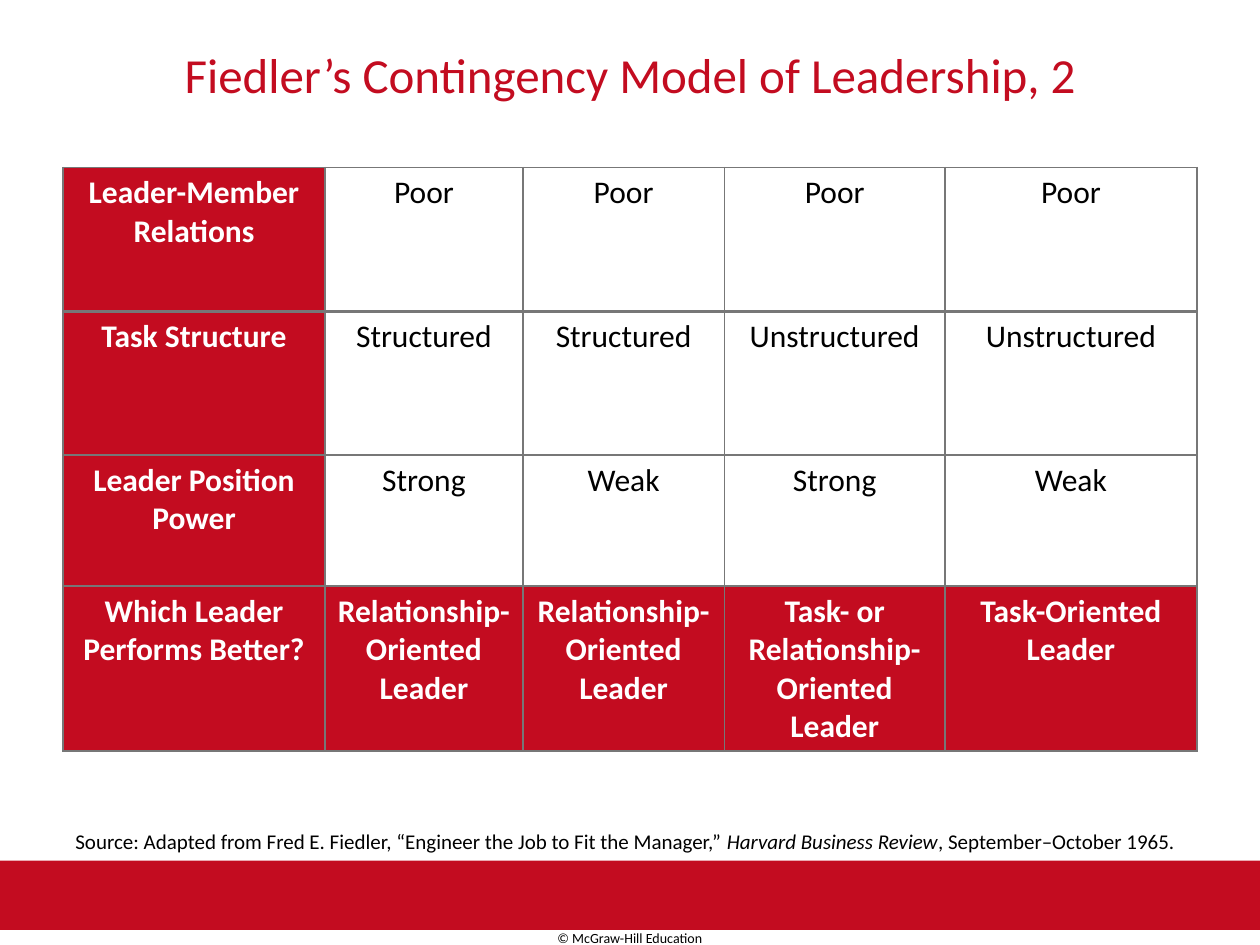
from lxml import etree
from pptx import Presentation
from pptx.dml.color import RGBColor
from pptx.enum.shapes import MSO_SHAPE
from pptx.enum.text import MSO_ANCHOR, PP_ALIGN
from pptx.oxml.ns import qn
from pptx.util import Inches, Pt

RECTANGLE = MSO_SHAPE.RECTANGLE
TOP, MIDDLE = MSO_ANCHOR.TOP, MSO_ANCHOR.MIDDLE
LEFT, CENTER = PP_ALIGN.LEFT, PP_ALIGN.CENTER
TITLE_ONLY = 5

COLORS = {"red": "C30C20", "grey": "777777", "black": "000000", "white": "FFFFFF"}
FORMATS = {
    "title": {"name": "Calibri", "size": Pt(28), "bold": False},
    "label": {"name": "Calibri", "size": Pt(18), "bold": True},
    "value": {"name": "Calibri", "size": Pt(18), "bold": False},
    "source": {"name": "Calibri", "size": Pt(12), "italic": False},
    "journal": {"name": "Calibri", "size": Pt(12), "italic": True},
    "copyright": {"name": "Calibri", "size": Pt(8)},
}
COLUMN_WIDTHS = [2.08, 1.57, 1.6, 1.75, 2]
ROW_HEIGHTS = [1.14, 1.14, 1.04, 1.31]
ROWS = [
    ["Leader-Member Relations", "Poor", "Poor", "Poor", "Poor"],
    ["Task Structure", "Structured", "Structured", "Unstructured", "Unstructured"],
    ["Leader Position Power", "Strong", "Weak", "Strong", "Weak"],
    [
        "Which Leader Performs Better?",
        "Relationship-Oriented Leader",
        "Relationship-Oriented Leader",
        "Task- or Relationship-Oriented Leader",
        "Task-Oriented Leader",
    ],
]
SOURCE = [
    ("Source: Adapted from Fred E. Fiedler, “Engineer the Job to Fit the Manager,” ", "source"),
    ("Harvard Business Review", "journal"),
    (", September–October 1965.", "source"),
]


def rgb(color):
    """Return the named colour."""
    return RGBColor.from_string(COLORS[color])


def write_text(frame, spans, color, align):
    """Fill the first paragraph with spans of text and format name."""
    para = frame.paragraphs[0]
    para.alignment = align
    for text, style in spans:
        span = para.add_run()
        span.text = text
        for key, value in FORMATS[style].items():
            setattr(span.font, key, value)
        span.font.color.rgb = rgb(color)


def add_band(page, box):
    """Draw the red footer band."""
    band = page.shapes.add_shape(RECTANGLE, *map(Inches, box))
    band.shadow.inherit = False
    band.fill.solid()
    band.fill.fore_color.rgb = rgb("red")
    band.line.fill.background()


def add_title(page, box, text):
    """Place and format the title placeholder."""
    title = page.shapes.title
    title.left, title.top, title.width, title.height = map(Inches, box)
    title.text_frame.vertical_anchor = MIDDLE
    write_text(title.text_frame, [(text, "title")], "red", CENTER)


def add_text(page, box, spans, align):
    """Add a wrapped black text box."""
    frame = page.shapes.add_textbox(*map(Inches, box)).text_frame
    frame.word_wrap = True
    frame.vertical_anchor = TOP
    write_text(frame, spans, "black", align)


def set_borders(cell, widths):
    """Draw grey cell borders, given widths in points by side."""
    properties = cell._tc.get_or_add_tcPr()
    for side, width in widths.items():
        line = etree.SubElement(properties, qn(f"a:ln{side}"), w=str(Pt(width)))
        fill = etree.SubElement(line, qn("a:solidFill"))
        etree.SubElement(fill, qn("a:srgbClr"), val=COLORS["grey"])


def add_model_table(page, box):
    """Add the contingency table with a red label column and result row."""
    frame = page.shapes.add_table(len(ROWS), len(COLUMN_WIDTHS), *map(Inches, box))
    table = frame.table
    for column, width in zip(table.columns, COLUMN_WIDTHS):
        column.width = Inches(width)
    for row, height in zip(table.rows, ROW_HEIGHTS):
        row.height = Inches(height)
    for r, texts in enumerate(ROWS):
        for c, text in enumerate(texts):
            cell = table.cell(r, c)
            top, bottom = (2 if r == 1 else 1), (2 if r == 0 else 1)
            set_borders(cell, {"L": 1, "R": 1, "T": top, "B": bottom})
            if c == 0 or r == len(ROWS) - 1:
                cell.fill.solid()
                cell.fill.fore_color.rgb = rgb("red")
                style, color = "label", "white"
            else:
                cell.fill.background()
                style, color = "value", "black"
            write_text(cell.text_frame, [(text, style)], color, CENTER)


def main():
    """Build and save the slide."""
    deck = Presentation()
    deck.slide_width, deck.slide_height = Inches(10), Inches(7.5)
    page = deck.slides.add_slide(deck.slide_layouts[TITLE_ONLY])
    add_band(page, (0, 6.83, 10, 0.55))
    add_text(page, (2.5, 7.33, 5, 0.24), [("© McGraw-Hill Education", "copyright")], CENTER)
    add_title(page, (0, 0.25, 10, 0.67), "Fiedler’s Contingency Model of Leadership, 2")
    add_model_table(page, (0.5, 1.33, 9, 4.63))
    add_text(page, (0.5, 6.53, 9, 0.67), SOURCE, LEFT)
    deck.save("out.pptx")


if __name__ == "__main__":
    main()
